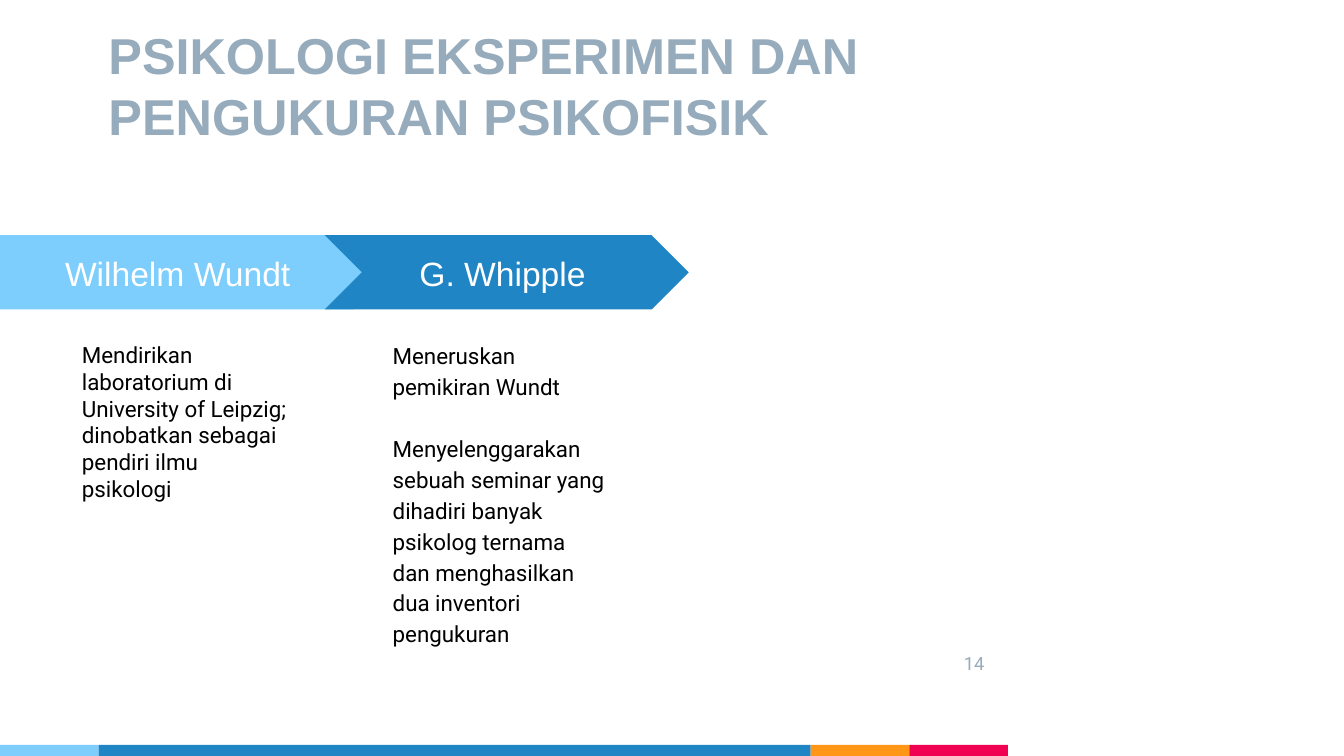
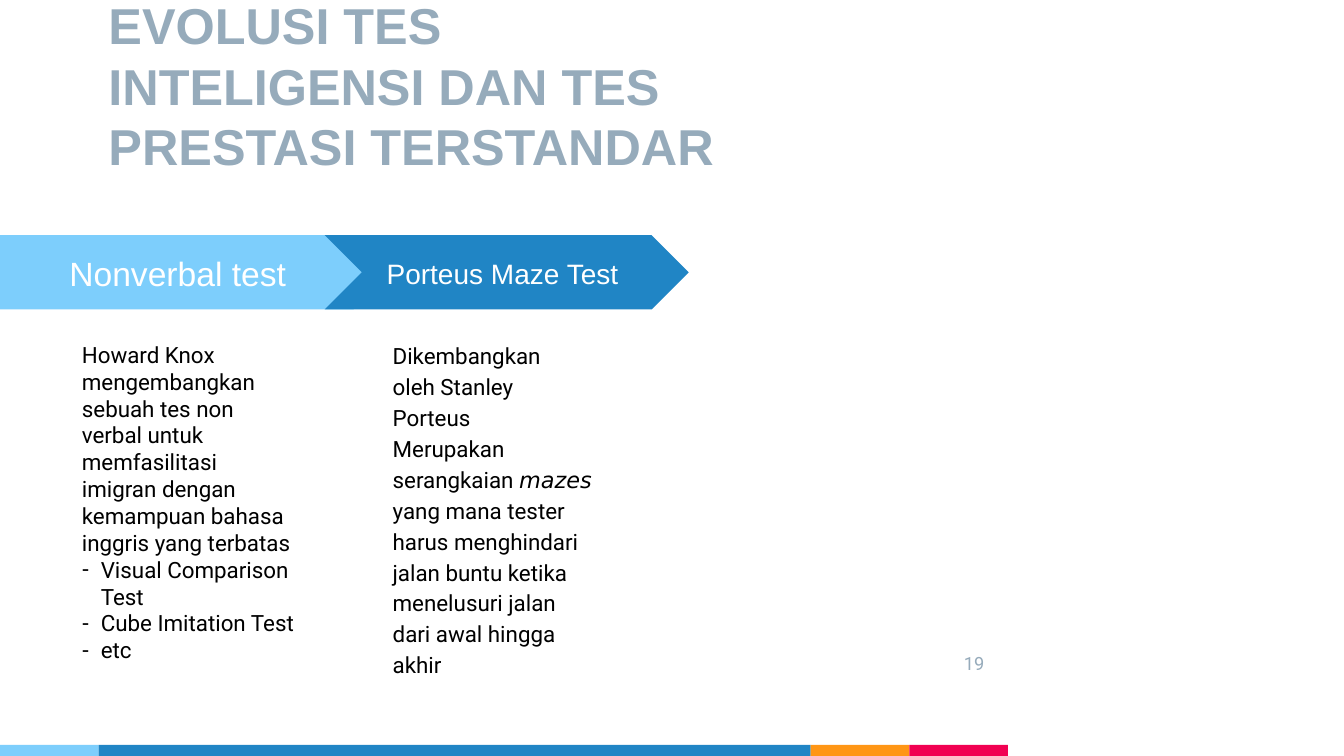
from dataclasses import dataclass
from itertools import pairwise

from lxml import etree
from pptx import Presentation
from pptx.dml.color import RGBColor
from pptx.enum.shapes import MSO_SHAPE
from pptx.enum.text import MSO_ANCHOR, MSO_AUTO_SIZE, PP_ALIGN
from pptx.oxml.ns import qn
from pptx.util import Pt

PENTAGON, CHEVRON, RECTANGLE = MSO_SHAPE.PENTAGON, MSO_SHAPE.CHEVRON, MSO_SHAPE.RECTANGLE
TOP, MIDDLE = MSO_ANCHOR.TOP, MSO_ANCHOR.MIDDLE
LEFT, CENTER = PP_ALIGN.LEFT, PP_ALIGN.CENTER
FIXED = MSO_AUTO_SIZE.NONE
TWO_CONTENT = 3


@dataclass(frozen=True)
class Theme:
    sky: str = "7DCEFC"
    blue: str = "2085C5"
    orange: str = "FF9615"
    pink: str = "F10152"
    slate: str = "96ABBB"
    white: str = "FFFFFF"
    black: str = "000000"
    heading_font: str = "Arial"
    body_font: str = "Roboto"
    accent_font: str = "DejaVu Sans"
    title_size: int = 36
    header_size: int = 24
    small_header_size: int = 20
    body_size: int = 16
    number_size: int = 13
    loose: float = 1.15
    hanging: float = 13.5


@dataclass(frozen=True)
class Bullet:
    text: str


@dataclass(frozen=True)
class Accent:
    text: str


def apply(target, values):
    for name, value in values.items():
        setattr(target, name, value)


class SlideBuilder:
    def __init__(self, deck, theme):
        self.deck = deck
        self.theme = theme
        self.page = None

    def start(self):
        self.page = self.deck.slides.add_slide(self.deck.slide_layouts[TWO_CONTENT])
        self.bands()

    def place(self, box, left, top, width, height):
        apply(box, {"left": Pt(left), "top": Pt(top), "width": Pt(width), "height": Pt(height)})

    def style(self, font, size, color, bold=False):
        return {"name": font, "size": Pt(size), "color": color, "bold": bold, "italic": False}

    def fill_text(self, box, paragraphs, style, anchor=TOP, align=LEFT, spacing=1.0, right=0):
        frame = box.text_frame
        apply(frame, {
            "word_wrap": True, "auto_size": FIXED, "vertical_anchor": anchor,
            "margin_left": 0, "margin_right": Pt(right), "margin_top": Pt(1), "margin_bottom": 0,
        })
        for index, spans in enumerate(paragraphs):
            para = frame.add_paragraph() if index else frame.paragraphs[0]
            apply(para, {"alignment": align, "line_spacing": spacing,
                         "space_before": Pt(0), "space_after": Pt(0)})
            self.bullet(para, isinstance(spans[0], Bullet))
            for content in spans:
                span = para.add_run()
                span.text = content if isinstance(content, str) else content.text
                values = dict(style)
                color = values.pop("color")
                if isinstance(content, Accent):
                    values.update(name=self.theme.accent_font, italic=True)
                apply(span.font, values)
                span.font.color.rgb = RGBColor.from_string(color)

    def bullet(self, para, shown):
        properties = para._p.get_or_add_pPr()
        indent = Pt(self.theme.hanging) if shown else 0
        properties.set("marL", str(indent))
        properties.set("indent", str(-indent))
        if shown:
            etree.SubElement(properties, qn("a:buChar")).set("char", "-")
        else:
            etree.SubElement(properties, qn("a:buNone"))

    def shape(self, kind, color, *bounds):
        box = self.page.shapes.add_shape(kind, *map(Pt, bounds))
        box.shadow.inherit = False
        box.fill.solid()
        box.fill.fore_color.rgb = RGBColor.from_string(color)
        box.line.fill.background()
        return box

    def bands(self):
        theme = self.theme
        edges = pairwise((0, 70.5, 579, 649.5, 720))
        colors = (theme.sky, theme.blue, theme.orange, theme.pink)
        for (left, right), color in zip(edges, colors):
            self.shape(RECTANGLE, color, left, 532, right - left, 8)

    def title(self, text, width):
        theme = self.theme
        box = self.page.shapes.title
        self.place(box, 77.5, 16, width, 88.5)
        self.fill_text(box, [[text]],
                       self.style(theme.heading_font, theme.title_size, theme.slate, True), MIDDLE)

    def headers(self, first, second, second_size):
        theme = self.theme
        arrows = (
            (PENTAGON, theme.sky, 0, 279, first, theme.header_size, 12),
            (CHEVRON, theme.blue, 232, 260, second, second_size, 6),
        )
        for kind, color, left, width, text, size, right in arrows:
            box = self.shape(kind, color, left, 168, width, 53)
            self.fill_text(box, [[text]], self.style(theme.heading_font, size, theme.white),
                           MIDDLE, CENTER, right=right)

    def body(self, box, paragraphs, bounds, spacing=1.0):
        theme = self.theme
        self.place(box, *bounds)
        self.fill_text(box, paragraphs,
                       self.style(theme.body_font, theme.body_size, theme.black), spacing=spacing)

    def columns(self, left, left_width, intro, intro_width, detail, detail_width):
        loose = self.theme.loose
        left_box, detail_box = list(self.page.placeholders)[1:3]
        intro_box = self.page.shapes.add_textbox(0, 0, 0, 0)
        self.body(left_box, left, (58.5, 242.5, left_width, 213))
        self.body(intro_box, [[intro]], (280.5, 240.5, intro_width, 46), loose)
        self.body(detail_box, [detail], (280.5, 307, detail_width, 156), loose)

    def number(self, text):
        theme = self.theme
        box = self.page.shapes.add_textbox(Pt(688.5), Pt(465), Pt(18), Pt(17))
        self.fill_text(box, [[text]],
                       self.style(theme.body_font, theme.number_size, theme.slate))


def main():
    deck = Presentation()
    apply(deck, {"slide_width": Pt(960), "slide_height": Pt(540)})
    theme = Theme()
    builder = SlideBuilder(deck, theme)

    builder.start()
    builder.title("PSIKOLOGI EKSPERIMEN DAN PENGUKURAN PSIKOFISIK", 611)
    builder.headers("Wilhelm Wundt", "G. Whipple", theme.header_size)
    builder.columns(
        [["Mendirikan laboratorium di University of Leipzig; dinobatkan sebagai "
          "pendiri ilmu psikologi"]], 149,
        "Meneruskan pemikiran Wundt", 124,
        ["Menyelenggarakan sebuah seminar yang dihadiri banyak psikolog ternama "
         "dan menghasilkan dua inventori pengukuran"], 152,
    )
    builder.number("14")

    builder.start()
    builder.title("EVOLUSI TES INTELIGENSI DAN TES PRESTASI TERSTANDAR", 461)
    builder.headers("Nonverbal test", "Porteus Maze Test", theme.small_header_size)
    builder.columns(
        [["Howard Knox mengembangkan sebuah tes non verbal untuk memfasilitasi "
          "imigran dengan kemampuan bahasa inggris yang terbatas"],
         [Bullet("Visual Comparison Test")],
         [Bullet("Cube Imitation Test")],
         [Bullet("etc")]], 152.5,
        "Dikembangkan oleh Stanley Porteus", 124,
        ["Merupakan serangkaian ", Accent("mazes"),
         " yang mana tester harus menghindari jalan buntu ketika menelusuri jalan "
         "dari awal hingga akhir"], 145,
    )
    builder.number("19")

    deck.save("out.pptx")


if __name__ == "__main__":
    main()
